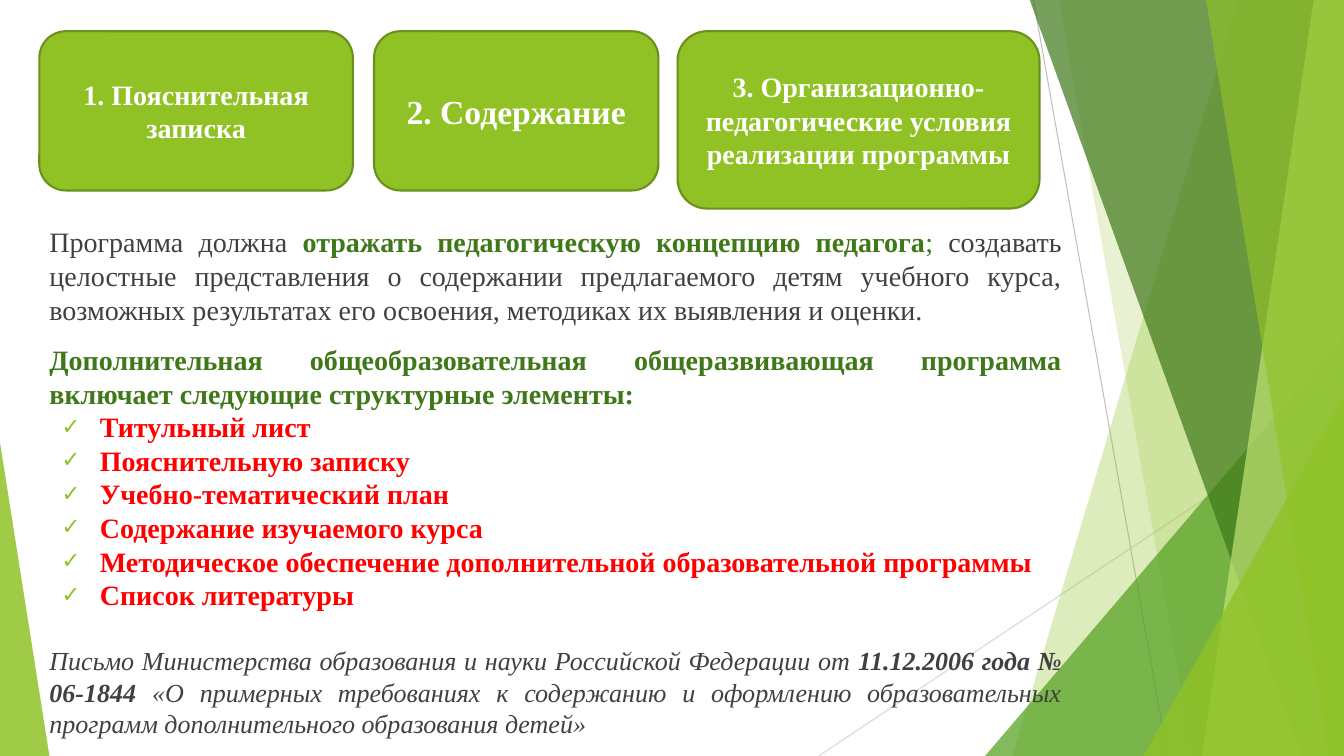
"""Build the slide on the structure of an additional education programme."""
from typing import NamedTuple

from lxml import etree
from pptx import Presentation
from pptx import dml, slide as sl, util as u
from pptx.dml import color, fill as fl
from pptx.enum import shapes as sh, text as tx
from pptx.oxml import ns
from pptx.text import text as tt

RGBColor = color.RGBColor
LIME = RGBColor(0x90, 0xC2, 0x26)
GREEN = RGBColor(0x54, 0xA0, 0x21)
DARK = RGBColor(0x3F, 0x78, 0x19)
PALE = RGBColor(0xC0, 0xE4, 0x74)
EDGE = RGBColor(0x6B, 0x90, 0x1C)
GREY = RGBColor(0x40, 0x40, 0x40)
RED = RGBColor(0xFF, 0x00, 0x00)
WHITE = RGBColor(0xFF, 0xFF, 0xFF)
MID = RGBColor(0xBF, 0xBF, 0xBF)
SOFT = RGBColor(0xD9, 0xD9, 0xD9)
FONT = "Times New Roman"
WIDE, HIGH, TOP = 13.33, 7.5, -0.01


class Ray(NamedTuple):
    """A thin line between two points."""
    x1: float
    y1: float
    x2: float
    y2: float
    tint: RGBColor


class Pane(NamedTuple):
    """A pane from a slanted left side to the right slide edge."""
    top: float
    base: float
    tint: RGBColor
    alpha: int


class Wedge(NamedTuple):
    """A right triangle standing on the bottom slide edge."""
    left: float
    top: float
    width: float
    apex: float
    tint: RGBColor
    alpha: int


class Card(NamedTuple):
    """A rounded box naming one section."""
    left: float
    width: float
    height: float
    label: str
    size: float


RAYS = [Ray(10.25, 0, 11.58, HIGH, MID), Ray(WIDE, 4.03, 8.12, HIGH, SOFT)]
DECOR = [
    Pane(12.28, 10.04, LIME, 30),
    Pane(10.5, 11.83, LIME, 20),
    Wedge(9.77, 3.33, 3.56, 1, GREEN, 72),
    Pane(10.21, 12.91, DARK, 70),
    Pane(13.03, 11.92, PALE, 70),
    Pane(11.96, 13.18, LIME, 65),
    Wedge(11.34, 3.93, 1.99, 1, LIME, 80),
    Wedge(0, 4.39, 0.49, 0, LIME, 85),
]
CARDS = [
    Card(0.39, 3.11, 1.58, "1. Пояснительная записка", 20),
    Card(3.71, 2.82, 1.58, "2. Содержание", 24),
    Card(6.72, 3.59, 1.76,
         "3. Организационно-педагогические условия реализации программы", 20),
]
ITEMS = [
    "Титульный лист",
    "Пояснительную записку",
    "Учебно-тематический план",
    "Содержание изучаемого курса",
    "Методическое обеспечение дополнительной образовательной программы",
    "Список литературы",
]


def write(para: tt._Paragraph, text: str, *, size: float = 20, tint: RGBColor = GREY,
          bold: bool = False, slant: bool = False) -> None:
    """Add one formatted run to a paragraph."""
    run = para.add_run()
    run.text = text
    font = run.font
    font.name, font.size = FONT, u.Pt(size)
    font.bold, font.italic = bold, slant
    font.color.rgb = tint


def paint(fill: fl.FillFormat, shape, tint: RGBColor, alpha: int) -> None:
    """Fill a shape with a see-through colour and no outline."""
    fill.solid()
    fill.fore_color.rgb = tint
    hue = shape.element.spPr.find(ns.qn("a:solidFill"))[0]
    etree.SubElement(hue, ns.qn("a:alpha")).set("val", str(alpha * 1000))
    shape.line.fill.background()
    shape.shadow.inherit = False


def draw_ray(page: sl.Slide, ray: Ray) -> None:
    """Draw a thin line."""
    ends = [u.Inches(n) for n in ray[:4]]
    line = page.shapes.add_connector(sh.MSO_CONNECTOR.STRAIGHT, *ends)
    line.line.color.rgb = ray.tint
    line.line.width = u.Pt(0.75)
    etree.SubElement(line.element.spPr, ns.qn("a:effectLst"))


def draw_decor(page: sl.Slide, part: Pane | Wedge) -> None:
    """Draw a pane or a wedge."""
    if isinstance(part, Pane):
        dots = [(part.top, TOP), (WIDE, TOP), (WIDE, HIGH), (part.base, HIGH)]
        dots = [(u.Inches(x), u.Inches(y)) for x, y in dots]
        form = page.shapes.build_freeform(*dots[0])
        form.add_line_segments(dots[1:], close=True)
        shape = form.convert_to_shape()
    else:
        shape = page.shapes.add_shape(
            sh.MSO_SHAPE.ISOSCELES_TRIANGLE, u.Inches(part.left), u.Inches(part.top),
            u.Inches(part.width), u.Inches(HIGH - part.top))
        shape.adjustments[0] = part.apex
    paint(shape.fill, shape, part.tint, part.alpha)


def draw_card(page: sl.Slide, card: Card) -> None:
    """Draw a section box with its label."""
    box = page.shapes.add_shape(
        sh.MSO_SHAPE.ROUNDED_RECTANGLE, u.Inches(card.left), u.Inches(0.31),
        u.Inches(card.width), u.Inches(card.height))
    box.shadow.inherit = False
    box.fill.solid()
    box.fill.fore_color.rgb = LIME
    box.line.color.rgb = EDGE
    box.line.width = u.Pt(1.5)
    frame = box.text_frame
    frame.word_wrap = True
    frame.vertical_anchor = tx.MSO_ANCHOR.MIDDLE
    para = frame.paragraphs[0]
    para.alignment = tx.PP_ALIGN.CENTER
    write(para, card.label, size=card.size, tint=WHITE, bold=True)


def start(para: tt._Paragraph, gap: float = 0, tick: bool = False) -> tt._Paragraph:
    """Set the spacing, alignment and bullet of a paragraph."""
    para.alignment = tx.PP_ALIGN.JUSTIFY
    para.space_before, para.space_after = u.Pt(gap), u.Pt(0)
    props = para._p.get_or_add_pPr()
    props.set("marL", str(u.Inches(0.5 if tick else 0)))
    props.set("indent", str(u.Inches(-0.38 if tick else 0)))
    if tick:
        hue = etree.SubElement(props, ns.qn("a:buClr"))
        etree.SubElement(hue, ns.qn("a:srgbClr")).set("val", str(LIME))
        etree.SubElement(props, ns.qn("a:buSzPct")).set("val", "80000")
        etree.SubElement(props, ns.qn("a:buChar")).set("char", "✓")
    else:
        etree.SubElement(props, ns.qn("a:buNone"))
    return para


def fill_body(page: sl.Slide) -> None:
    """Place and fill the main text above the decor."""
    body = page.placeholders[1]
    page.shapes._spTree.append(body.element)
    body.left, body.top = u.Inches(0.39), u.Inches(2.18)
    body.width, body.height = u.Inches(10.24), u.Inches(5.32)
    frame = body.text_frame
    frame.word_wrap = True
    frame.auto_size = tx.MSO_AUTO_SIZE.NONE
    frame.vertical_anchor = tx.MSO_ANCHOR.TOP
    para = start(frame.paragraphs[0])
    write(para, "Программа должна ")
    write(para, "отражать педагогическую концепцию педагога", tint=DARK, bold=True)
    write(para, "; ", tint=DARK)
    write(para, "создавать целостные представления о содержании предлагаемого детям "
          "учебного курса, возможных результатах его освоения, методиках их выявления "
          "и оценки.")
    para = start(frame.add_paragraph(), gap=12)
    write(para, "Дополнительная общеобразовательная общеразвивающая программа включает "
          "следующие структурные элементы:", tint=DARK, bold=True)
    for item in ITEMS:
        write(start(frame.add_paragraph(), tick=True), item, tint=RED, bold=True)
    para = start(frame.add_paragraph(), gap=24)
    write(para, "Письмо Министерства образования и науки Российской Федерации от ",
          size=18.6, slant=True)
    write(para, "11.12.2006 года № 06-1844 ", size=18.6, bold=True, slant=True)
    write(para, "«О примерных требованиях к содержанию и оформлению образовательных "
          "программ дополнительного образования детей»", size=18.6, slant=True)


def main() -> None:
    """Build and save the slide."""
    deck = Presentation()
    deck.slide_width, deck.slide_height = u.Inches(WIDE), u.Inches(HIGH)
    page = deck.slides.add_slide(deck.slide_layouts[1])
    title = page.shapes.title.element
    title.getparent().remove(title)
    for ray in RAYS:
        draw_ray(page, ray)
    for part in DECOR:
        draw_decor(page, part)
    fill_body(page)
    for card in CARDS:
        draw_card(page, card)
    deck.save("out.pptx")


if __name__ == "__main__":
    main()
